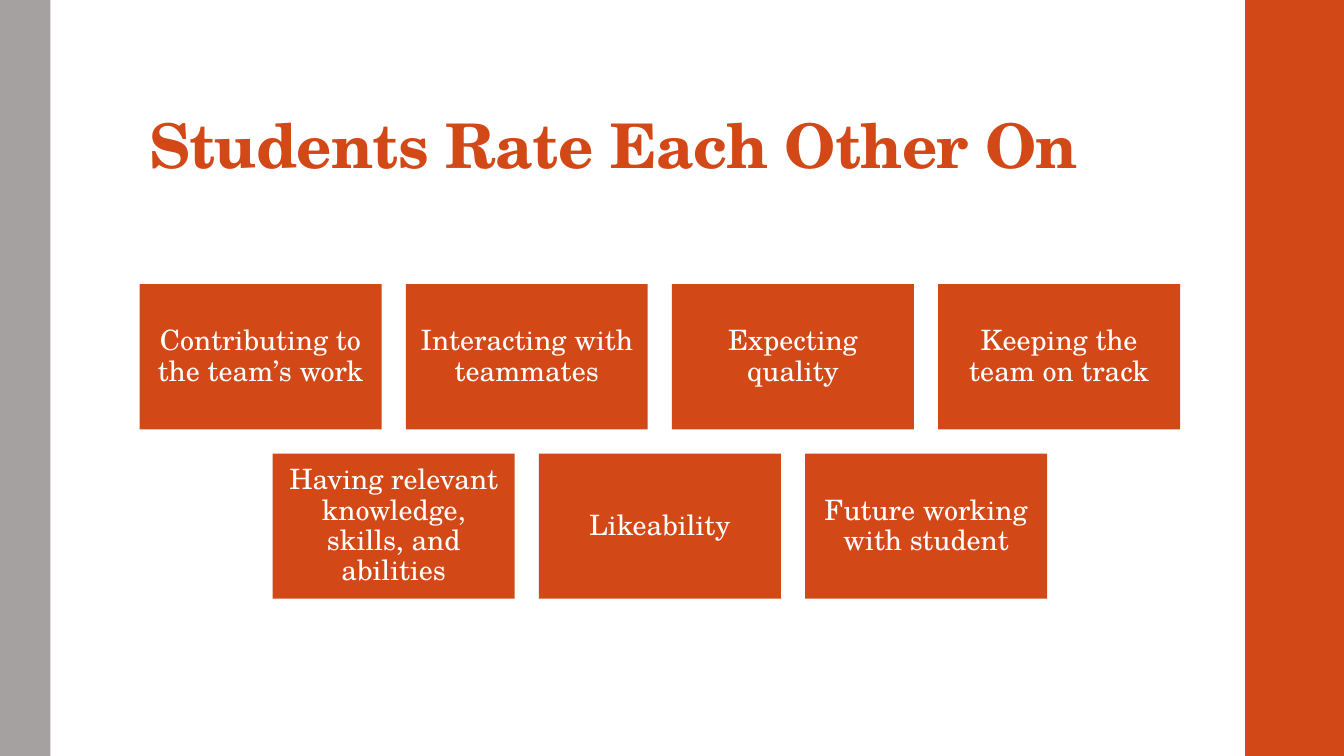
from pptx import Presentation
from pptx import util as u
from pptx.dml.color import RGBColor
from pptx.enum import shapes, text

ORANGE = RGBColor(0xD3, 0x48, 0x17)
GRAY = RGBColor(0xA6, 0xA1, 0xA1)
WHITE = RGBColor(0xFF, 0xFF, 0xFF)
FONT = "TeX Gyre Schola"

# Slide and card grid, in inches
SLIDE_WIDTH, SLIDE_HEIGHT = 13.33, 7.5
GRID_LEFT, GRID_TOP, GRID_WIDTH = 1.38, 2.82, 10.33
CARD_WIDTH, CARD_HEIGHT, GAP = 2.4, 1.44, 0.24

CARD_ROWS = [
    ["Contributing to the team’s work", "Interacting with teammates",
     "Expecting quality", "Keeping the team on track"],
    ["Having relevant knowledge, skills, and abilities", "Likeability",
     "Future working with student"],
]


def add_rectangle(slide, left, top, width, height, color):
    shape = slide.shapes.add_shape(
        shapes.MSO_SHAPE.RECTANGLE,
        u.Inches(left), u.Inches(top), u.Inches(width), u.Inches(height))
    shape.shadow.inherit = False
    shape.fill.solid()
    shape.fill.fore_color.rgb = color
    shape.line.fill.background()
    return shape


def write_text(shape, words, size, color, insets, anchor, align, bold=False):
    frame = shape.text_frame
    frame.text = words
    frame.word_wrap = True
    frame.vertical_anchor = anchor
    (frame.margin_left, frame.margin_top,
     frame.margin_right, frame.margin_bottom) = map(u.Inches, insets)
    paragraph = frame.paragraphs[0]
    paragraph.alignment = align
    paragraph.line_spacing = 0.9
    run = paragraph.runs[0]
    run.font.name = FONT
    run.font.size = u.Pt(size)
    run.font.bold = bold
    run.font.color.rgb = color
    return run


def add_title(slide, words):
    box = slide.shapes.add_textbox(
        u.Inches(GRID_LEFT), u.Inches(0.32), u.Inches(10.6), u.Inches(1.53))
    run = write_text(box, words, 44, ORANGE, (0.1, 0.03, 0.1, 0.05),
                     text.MSO_ANCHOR.BOTTOM, text.PP_ALIGN.LEFT, bold=True)
    # Slightly tightened letter spacing, in hundredths of a point
    run.font._element.set("spc", "-50")


def add_card_row(slide, row, labels):
    row_width = len(labels) * (CARD_WIDTH + GAP) - GAP
    left = GRID_LEFT + (GRID_WIDTH - row_width) / 2
    top = GRID_TOP + row * (CARD_HEIGHT + GAP)
    for column, label in enumerate(labels):
        card = add_rectangle(slide, left + column * (CARD_WIDTH + GAP), top,
                             CARD_WIDTH, CARD_HEIGHT, ORANGE)
        write_text(card, label, 20, WHITE, (0.08,) * 4,
                   text.MSO_ANCHOR.MIDDLE, text.PP_ALIGN.CENTER)


def main():
    presentation = Presentation()
    presentation.slide_width = u.Inches(SLIDE_WIDTH)
    presentation.slide_height = u.Inches(SLIDE_HEIGHT)
    slide = presentation.slides.add_slide(presentation.slide_layouts[6])

    # Side bands
    add_rectangle(slide, 12.35, 0, SLIDE_WIDTH - 12.35, SLIDE_HEIGHT, ORANGE)
    add_rectangle(slide, 0, 0, 0.5, SLIDE_HEIGHT, GRAY)

    # Title and centred rows of cards
    add_title(slide, "Students Rate Each Other On")
    for row, labels in enumerate(CARD_ROWS):
        add_card_row(slide, row, labels)

    presentation.save("out.pptx")


if __name__ == "__main__":
    main()
